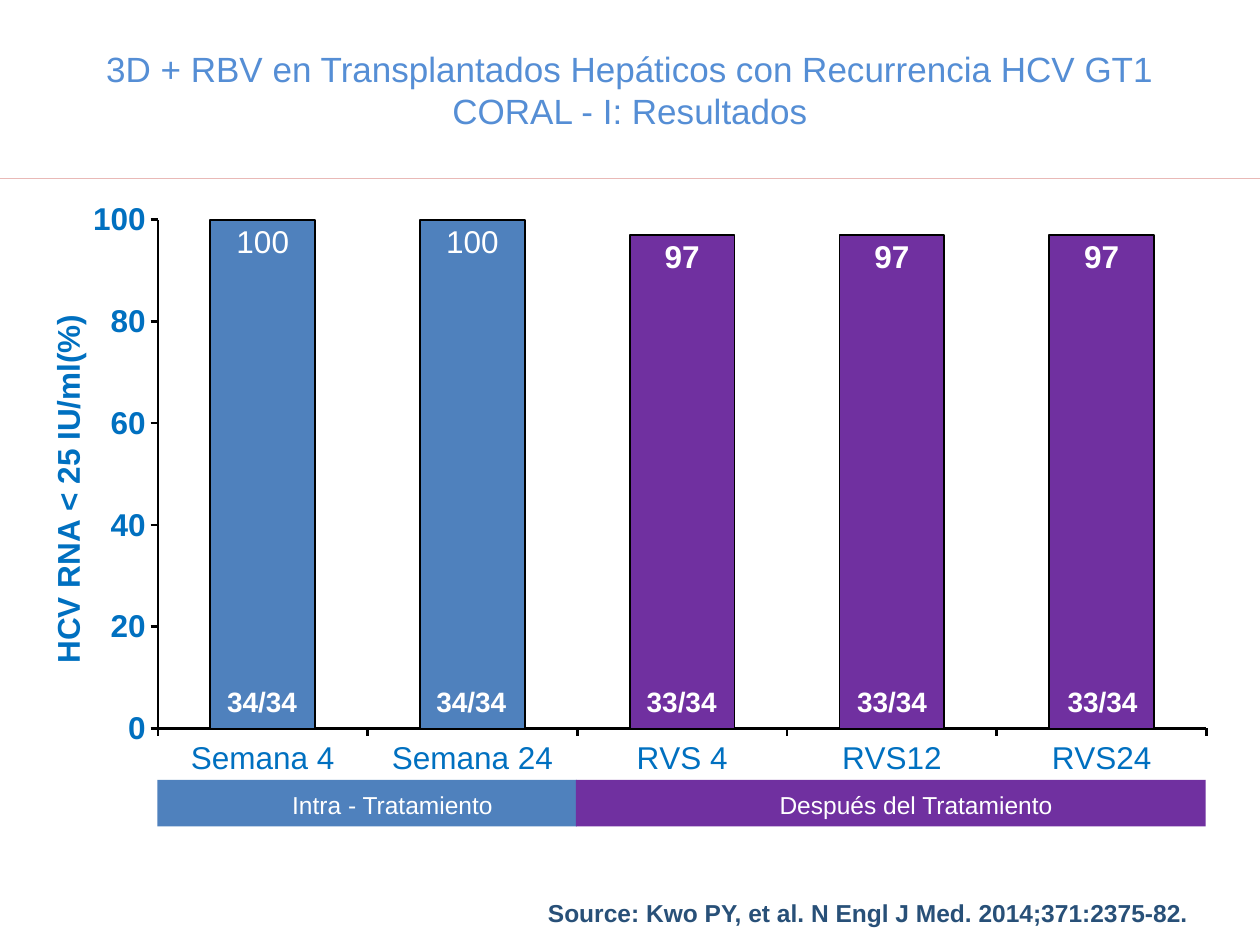
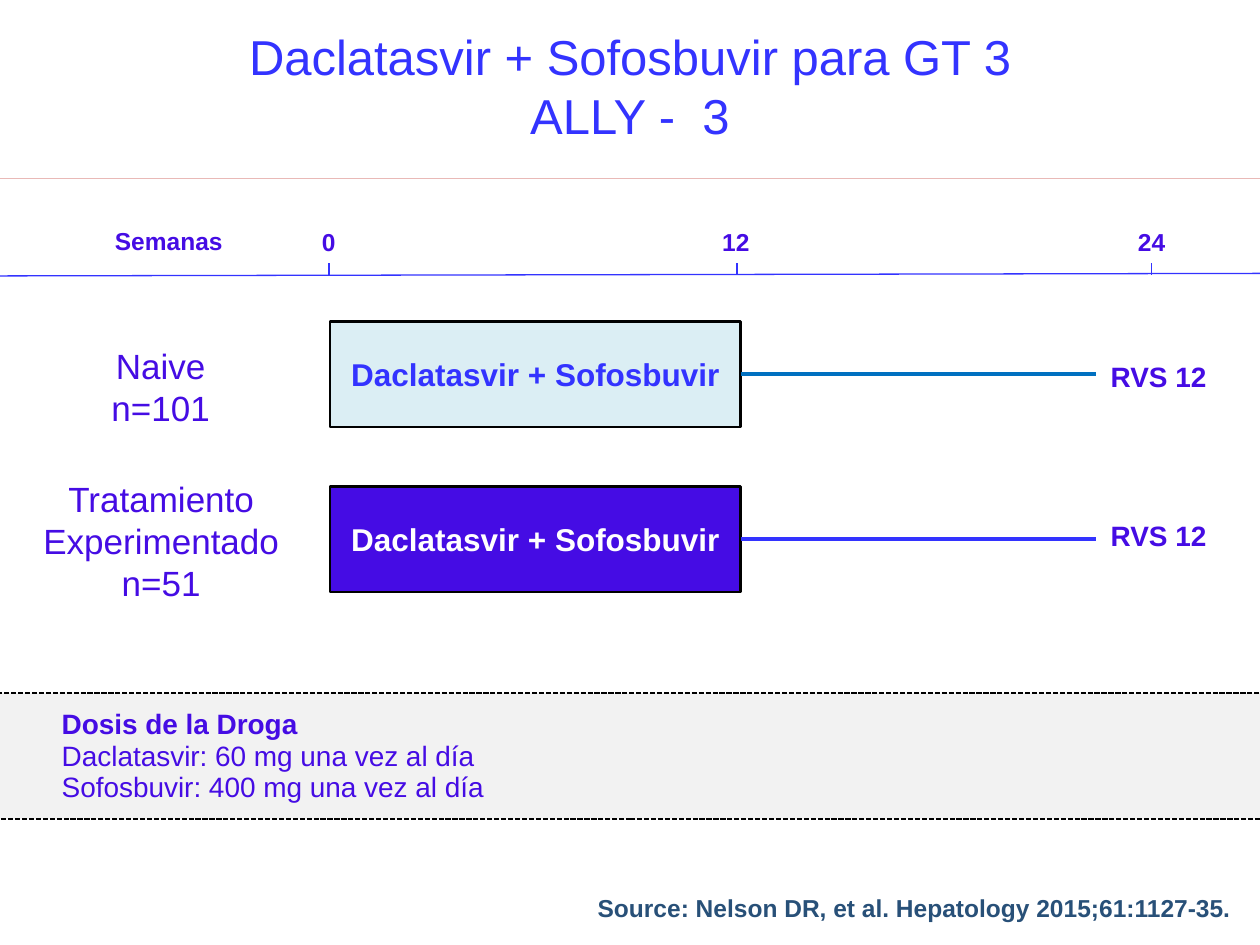
from lxml import etree
from pptx import Presentation
from pptx import util as u
from pptx.chart.data import CategoryChartData
from pptx.dml.color import RGBColor
from pptx.enum import chart as ch, dml, shapes, text
from pptx.oxml import parse_xml
from pptx.oxml.ns import nsdecls, qn

PX = 9144  # 100 px to the inch
FONT = "Arial"
WHITE = RGBColor(0xFF, 0xFF, 0xFF)
BLACK = RGBColor(0, 0, 0)
ROSE = RGBColor(0xE9, 0xB9, 0xB7)
NAVY = RGBColor(0x28, 0x50, 0x78)
SKY = RGBColor(0x55, 0x8E, 0xD5)
AZURE = RGBColor(0x00, 0x70, 0xC0)
STEEL = RGBColor(0x4F, 0x81, 0xBD)
PURPLE = RGBColor(0x70, 0x30, 0xA0)
BLUE = RGBColor(0x33, 0x33, 0xFF)
VIOLET = RGBColor(0x45, 0x0C, 0xE4)
ICE = RGBColor(0xDB, 0xEE, 0xF4)
GREY = RGBColor(0xF2, 0xF2, 0xF2)
LEFT, MID, RIGHT = text.PP_ALIGN.LEFT, text.PP_ALIGN.CENTER, text.PP_ALIGN.RIGHT


def box(slide, words, place, size, color, bold=False, align=MID,
        fill=None, edge=None, inset=10, lead=None):
    """Add text, one paragraph a line; a fill makes it a rectangle."""
    place = [n * PX for n in place]
    if fill is None:
        shape = slide.shapes.add_textbox(*place)
    else:
        shape = slide.shapes.add_shape(shapes.MSO_SHAPE.RECTANGLE, *place)
        shape.shadow.inherit = False
        shape.fill.solid()
        shape.fill.fore_color.rgb = fill
        if edge:
            shape.line.color.rgb = BLACK
            shape.line.width = u.Pt(edge)
        else:
            shape.line.fill.background()
    frame = shape.text_frame
    for key, val in {"word_wrap": True, "margin_left": inset * PX,
                     "vertical_anchor": text.MSO_ANCHOR.MIDDLE}.items():
        setattr(frame, key, val)
    frame.text = words
    for para in frame.paragraphs:
        para.alignment = align
        if lead:
            para.line_spacing = u.Pt(lead)
        for run in para.runs:
            for key, val in {"name": FONT, "size": u.Pt(size), "bold": bold}.items():
                setattr(run.font, key, val)
            run.font.color.rgb = color
    return shape


def rule(slide, ends, color, width):
    line = slide.shapes.add_connector(
        shapes.MSO_CONNECTOR.STRAIGHT, *[n * PX for n in ends])
    line.line.color.rgb = color
    line.line.width = u.Pt(width)
    etree.SubElement(line._element.spPr, qn("a:effectLst"))
    return line


deck = Presentation()
deck.slide_width, deck.slide_height = 1000 * PX, 750 * PX

# Title, rule and source on both slides
heads = [
    ("3D + RBV en Transplantados Hepáticos con Recurrencia HCV GT1\n"
     "CORAL - I: Resultados", (0, 0, 1000, 142), 20, SKY,
     "Source: Kwo PY, et al. N Engl J Med. 2014;371:2375-82.", (33, 707, 920, 35)),
    ("Daclatasvir + Sofosbuvir para GT 3\nALLY -  3", (0, -6, 1000, 147), 28, BLUE,
     "Source: Nelson DR, et al. Hepatology 2015;61:1127-35.", (180, 703, 807, 35)),
]
for title, spot, size, color, source, foot in heads:
    slide = deck.slides.add_slide(deck.slide_layouts[6])
    box(slide, title, spot, size, color, fill=WHITE)
    rule(slide, (0, 142, 1000, 142), ROSE, 0.5)
    box(slide, source, foot, 14, NAVY, bold=True, align=RIGHT)
results, design = deck.slides

# Slide 1: response chart
data = CategoryChartData(number_format="0")
data.categories = ["Semana 4", "Semana 24", "RVS 4", "RVS12", "RVS24"]
data.add_series("Series 1", (100, 100, 97, 97, 97))
chart = results.shapes.add_chart(
    ch.XL_CHART_TYPE.COLUMN_CLUSTERED,
    *[n * PX for n in (33, 158, 933, 483)], data).chart
chart.has_legend = chart.has_title = False
for key, val in {"name": FONT, "size": u.Pt(18), "bold": True}.items():
    setattr(chart.font, key, val)
chart.font.color.rgb = AZURE

cats, vals = chart.category_axis, chart.value_axis
for axis in (cats, vals):
    axis.has_major_gridlines = False
    axis.major_tick_mark = ch.XL_TICK_MARK.OUTSIDE
    axis.format.line.color.rgb = BLACK
    axis.format.line.width = u.Pt(1.5)
cats.tick_labels.font.bold = False
for key, val in {"minimum_scale": 0, "maximum_scale": 100, "major_unit": 20}.items():
    setattr(vals, key, val)
vals.axis_title.text_frame.text = "HCV RNA < 25 IU/ml(%)"
font = vals.axis_title.text_frame.paragraphs[0].runs[0].font
for key, val in {"name": FONT, "size": u.Pt(18), "bold": True}.items():
    setattr(font, key, val)
font.color.rgb = AZURE

plot = chart.plots[0]
plot.gap_width = 100
plot.vary_by_categories = False
bars = plot.series[0]
for item, color in [(bars, STEEL)] + [(bars.points[k], PURPLE) for k in (2, 3, 4)]:
    item.format.fill.solid()
    item.format.fill.fore_color.rgb = color
    item.format.line.color.rgb = BLACK
    item.format.line.width = u.Pt(1)
tags = bars.data_labels
for key, val in {"show_value": True, "number_format": "0",
                 "number_format_is_linked": False,
                 "position": ch.XL_LABEL_POSITION.INSIDE_END}.items():
    setattr(tags, key, val)
for key, val in {"name": FONT, "size": u.Pt(18), "bold": True}.items():
    setattr(tags.font, key, val)
tags.font.color.rgb = WHITE
for k in (0, 1):
    tag = bars.points[k].data_label
    tag.text_frame.text = "100"
    tag.position = ch.XL_LABEL_POSITION.INSIDE_END
    run = tag.text_frame.paragraphs[0].runs[0]
    run.font.size, run.font.bold = u.Pt(18), False
    run.font.color.rgb = WHITE
    run.font.fill._xPr.find(qn("a:solidFill")).addnext(parse_xml(
        f'<a:highlight {nsdecls("a")}><a:srgbClr val="{PURPLE}"/></a:highlight>'))
    run.font.name = FONT

area = chart._chartSpace.chart.plotArea
for old in area.findall(qn("c:layout")):
    area.remove(old)
sides = {"x": 0.099, "y": 0.034, "w": 0.892, "h": 0.836}
area.insert(0, parse_xml(
    f'<c:layout {nsdecls("c")}><c:manualLayout><c:layoutTarget val="inner"/>'
    '<c:xMode val="edge"/><c:yMode val="edge"/>'
    + "".join(f'<c:{key} val="{val:.2g}"/>' if key == "z" else f'<c:{key} val="{val}"/>'
              for key, val in sides.items())
    + "</c:manualLayout></c:layout>"))

for k, count in enumerate(["34/34"] * 2 + ["33/34"] * 3):
    box(results, count, (166 + k * 667 // 4, 537, 84, 40), 16, WHITE, bold=True)
for words, x, w, color in [("Intra - Tratamiento", 125, 333, STEEL),
                           ("Después del Tratamiento", 457, 500, PURPLE)]:
    box(results, words, (x, 619, w, 37), 14, WHITE, fill=color, inset=50, lead=18)

# Slide 2: week scale
box(design, "Semanas", (8, 169, 252, 44), 14, VIOLET, bold=True)
rule(design, (0, 219, 1000, 217), BLUE, 0.75)
for week, x, tick in [("0", 231, 261), ("12", 554, 585), ("24", 884, 914)]:
    box(design, week, (x, 164, 60, 56), 14, VIOLET, bold=True)
    rule(design, (tick, 218, tick, 209), BLUE, 1)

# Treatment arms
arms = [
    ("Naive\nn=101", (8, 256, 239, 102), 255, 277, ICE, BLUE, AZURE),
    ("Tratamiento Experimentado\nn=51", (8, 383, 240, 92), 386, 403, VIOLET, WHITE, BLUE),
]
for group, spot, top, end, fill, color, stroke in arms:
    box(design, group, spot, 20, VIOLET)
    drug = box(design, "Daclatasvir + Sofosbuvir", (262, top, 326, 84), 18, color,
               bold=True, fill=fill, edge=1.5)
    mid = top + 42
    rule(design, (588, mid, 870, mid), stroke, 2.25).begin_connect(drug, 3)
    box(design, "RVS 12", (870, end, 99, 44), 16, VIOLET, bold=True, fill=WHITE)

# Dose band
dose = box(design, "Dosis de la Droga\nDaclatasvir: 60 mg una vez al día\n"
           "Sofosbuvir: 400 mg una vez al día", (-1, 550, 1004, 100), 16, VIOLET,
           align=LEFT, fill=GREY, edge=1, inset=50, lead=18)
dose.line.dash_style = dml.MSO_LINE.SQUARE_DOT
dose.text_frame.paragraphs[0].runs[0].font.bold = True

deck.save("out.pptx")
